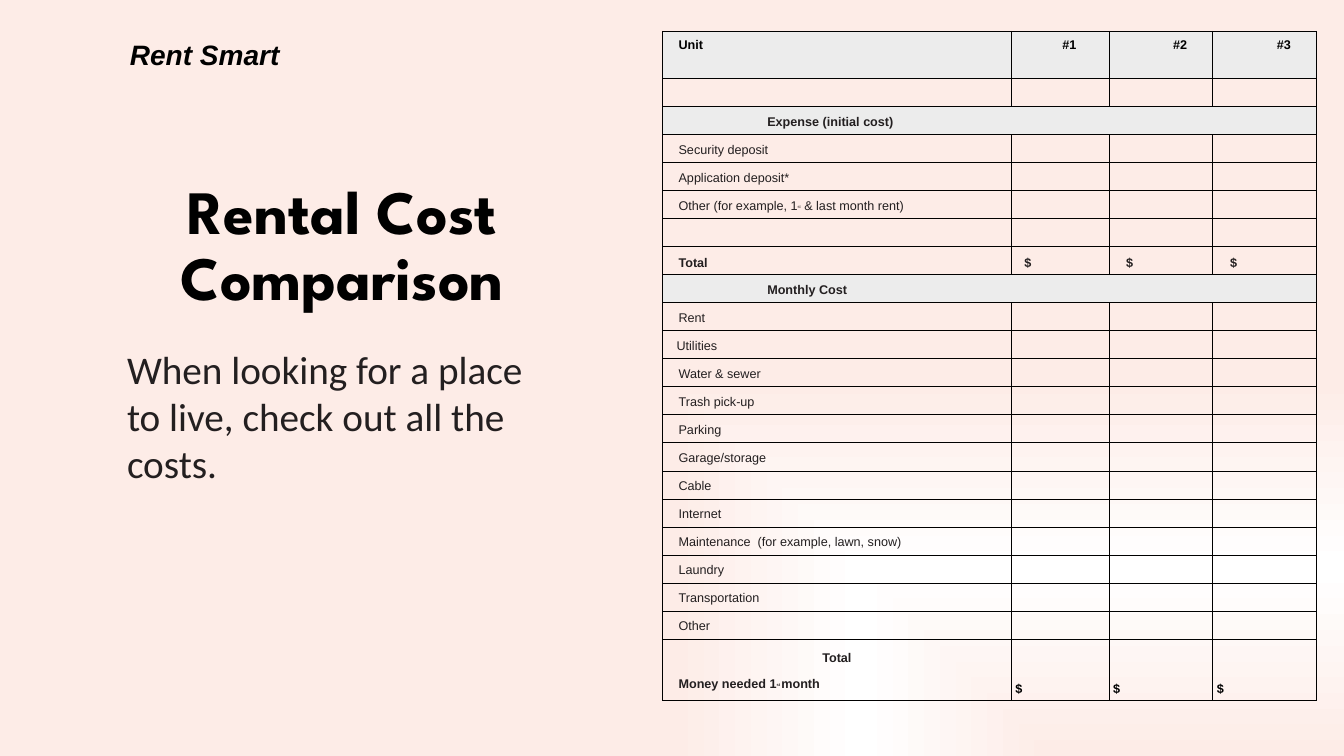
"""Build the Rental Cost Comparison slide with its worksheet table."""
import dataclasses

import pptx
import pptx.dml.color
import pptx.enum.text
import pptx.oxml
import pptx.oxml.ns
import pptx.util
from lxml import etree

Inches, Pt, qn = pptx.util.Inches, pptx.util.Pt, pptx.oxml.ns.qn
Align, Anchor = pptx.enum.text.PP_ALIGN, pptx.enum.text.MSO_ANCHOR


@dataclasses.dataclass(frozen=True)
class Theme:
    black: str = "000000"
    ink: str = "231F20"
    band: str = "ECECEC"
    blush: str = "FDECE7"
    white: str = "FFFFFF"
    sans: str = "Arial"
    display: str = "League Spartan"
    reading: str = "Calibri"
    title_size: float = 44
    body_size: float = 28
    tag_size: float = 20
    table_size: float = 9
    ordinal_size: float = 5
    outer_line: float = 0.75
    inner_line: float = 0.5


theme = Theme()
presentation = pptx.Presentation()
presentation.slide_width, presentation.slide_height = Inches(13.33), Inches(7.5)
slide = presentation.slides.add_slide(presentation.slide_layouts[5])


def share(left, top, width, height):
    """Turn percentages of the slide into a position and size."""
    across, down = presentation.slide_width / 100, presentation.slide_height / 100
    return [round(value) for value in (left * across, top * down, width * across, height * down)]


def write(paragraph, text, face, size, color, bold=False, align=Align.LEFT, indent=0):
    """Fill a paragraph, raising every second part between carets."""
    paragraph.alignment = align
    if indent:
        paragraph._p.get_or_add_pPr().set("marL", str(Inches(indent)))
    paragraph.font.name, paragraph.font.size, paragraph.font.bold = face, Pt(size), bold
    paragraph.font.color.rgb = pptx.dml.color.RGBColor.from_string(color)
    for number, part in enumerate(text.split("^")):
        if part:
            run = paragraph.add_run()
            run.text = part
            if number % 2:
                run.font.size = Pt(theme.ordinal_size)
                run.font._element.set("baseline", "30000")


slide.background.fill.gradient()
gradient = slide.background._cSld.find(".//" + qn("a:gradFill"))
for child in list(gradient):
    gradient.remove(child)
stops = etree.SubElement(gradient, qn("a:gsLst"))
for position, color in ((0, theme.blush), (50, theme.white), (100, theme.blush)):
    stop = etree.SubElement(stops, qn("a:gs"), pos=str(position * 1000))
    etree.SubElement(stop, qn("a:srgbClr"), val=color)
rings = etree.SubElement(gradient, qn("a:path"), path="rect")
etree.SubElement(rings, qn("a:fillToRect"), l="100000", t="100000")

tag = slide.shapes.add_textbox(*share(-6.3, 4.27, 43.06, 16.67))
tag.text_frame.word_wrap = True
write(tag.text_frame.paragraphs[0], "Rent Smart", theme.sans, theme.tag_size,
      theme.black, True, Align.CENTER)
tag.text_frame.paragraphs[0].font.italic = True

title = slide.shapes.title
title.left, title.top, title.width, title.height = share(10.8, 23.07, 29.33, 19.33)
title.text_frame.vertical_anchor = Anchor.MIDDLE
title.text_frame.paragraphs[0].line_spacing = 0.9
write(title.text_frame.paragraphs[0], "Rental Cost Comparison", theme.display,
      theme.title_size, theme.black, True, Align.CENTER)

advice = slide.shapes.add_textbox(*share(9.45, 45.6, 32.03, 18.8))
frame = advice.text_frame
frame.word_wrap = True
frame.auto_size = pptx.enum.text.MSO_AUTO_SIZE.SHAPE_TO_FIT_TEXT
frame.vertical_anchor = Anchor.MIDDLE
frame.margin_left = frame.margin_top = frame.margin_right = frame.margin_bottom = 0
write(frame.paragraphs[0], "When looking for a place to live, check out all the costs.",
      theme.reading, theme.body_size, theme.ink)

labels = [
    "Unit", "", "Expense (initial cost)", "Security deposit", "Application deposit*",
    "Other (for example, 1^st^ & last month rent)", "", "Total", "Monthly Cost", "Rent",
    "Utilities", "Water & sewer", "Trash pick-up", "Parking", "Garage/storage", "Cable",
    "Internet", "Maintenance  (for example, lawn, snow)", "Laundry", "Transportation",
    "Other", "Total\nMoney needed 1^st ^month",
]
sections = ("Expense (initial cost)", "Monthly Cost")
header, subtotal, last = 0, labels.index("Total"), len(labels) - 1
unit_columns = (1, 2, 3)
values = {header: ["#1", "#2", "#3"], subtotal: ["$"] * 3, last: ["$"] * 3}
indents = {header: (0.12, 0.18, 0.38, 0.38), subtotal: (0.12, 0.09, 0.13, 0.13)}
column_widths = (3.46, 0.97, 1.03, 1.03)
header_height, last_height = Inches(0.47), Inches(0.61)

place = share(49.29, 4.13, 48.69, 88.53)
table = slide.shapes.add_table(len(labels), len(column_widths), *place).table
table.first_row = table.horz_banding = False
for column, width in zip(table.columns, column_widths):
    column.width = Inches(width)
plain_height = (place[3] - header_height - last_height) // (len(labels) - 2)
for row in table.rows:
    row.height = plain_height
table.rows[header].height, table.rows[last].height = header_height, last_height

for row, label in enumerate(labels):
    section = label in sections
    if section:
        table.cell(row, 0).merge(table.cell(row, unit_columns[-1]))
    for column, text in enumerate([label] + values.get(row, [""] * 3)):
        cell = table.cell(row, column)
        cell.margin_left = cell.margin_right = Inches(0.04)
        cell.margin_top = cell.margin_bottom = Inches(0.04)
        if row == header:
            cell.vertical_anchor = Anchor.TOP
        elif row == subtotal or row == last and column:
            cell.vertical_anchor = Anchor.BOTTOM
        else:
            cell.vertical_anchor = Anchor.MIDDLE

        default_indent = 0 if column else 1 if section else 0.1 if label == "Utilities" else 0.12
        indent = indents[row][column] if row in indents else default_indent
        bold = section or row in values
        color = theme.black if row == header or row == last and column else theme.ink
        for number, line in enumerate(text.split("\n")):
            paragraph = cell.text_frame.paragraphs[0] if number == 0 else cell.text_frame.add_paragraph()
            paragraph.line_spacing = 1.19
            paragraph.space_after = Pt(6)
            if number:
                paragraph.space_before = Pt(0.8)
            summary = row == last and column == 0 and number == 0
            centred = summary or row == header and column > 0
            write(paragraph, line, theme.sans, theme.table_size, color, bold,
                  Align.CENTER if centred else Align.LEFT, 0 if summary else indent)
            if not line:
                etree.SubElement(paragraph._p, qn("a:endParaRPr"), sz=str(theme.table_size * 100))

        if row == header or section:
            cell.fill.solid()
            cell.fill.fore_color.rgb = pptx.dml.color.RGBColor.from_string(theme.band)
        else:
            cell.fill.background()
        edges = {
            "a:lnL": theme.outer_line,
            "a:lnR": theme.outer_line,
            "a:lnT": theme.outer_line if row == header else theme.inner_line,
            "a:lnB": theme.outer_line if row == last else theme.inner_line,
        }
        properties = cell._tc.get_or_add_tcPr()
        for order, (edge, width) in enumerate(edges.items()):
            line = pptx.oxml.parse_xml(
                f'<{edge} {pptx.oxml.ns.nsdecls("a")} w="{Pt(width)}"><a:solidFill>'
                f'<a:srgbClr val="{theme.black}"/></a:solidFill></{edge}>')
            properties.insert(order, line)

presentation.save("out.pptx")
